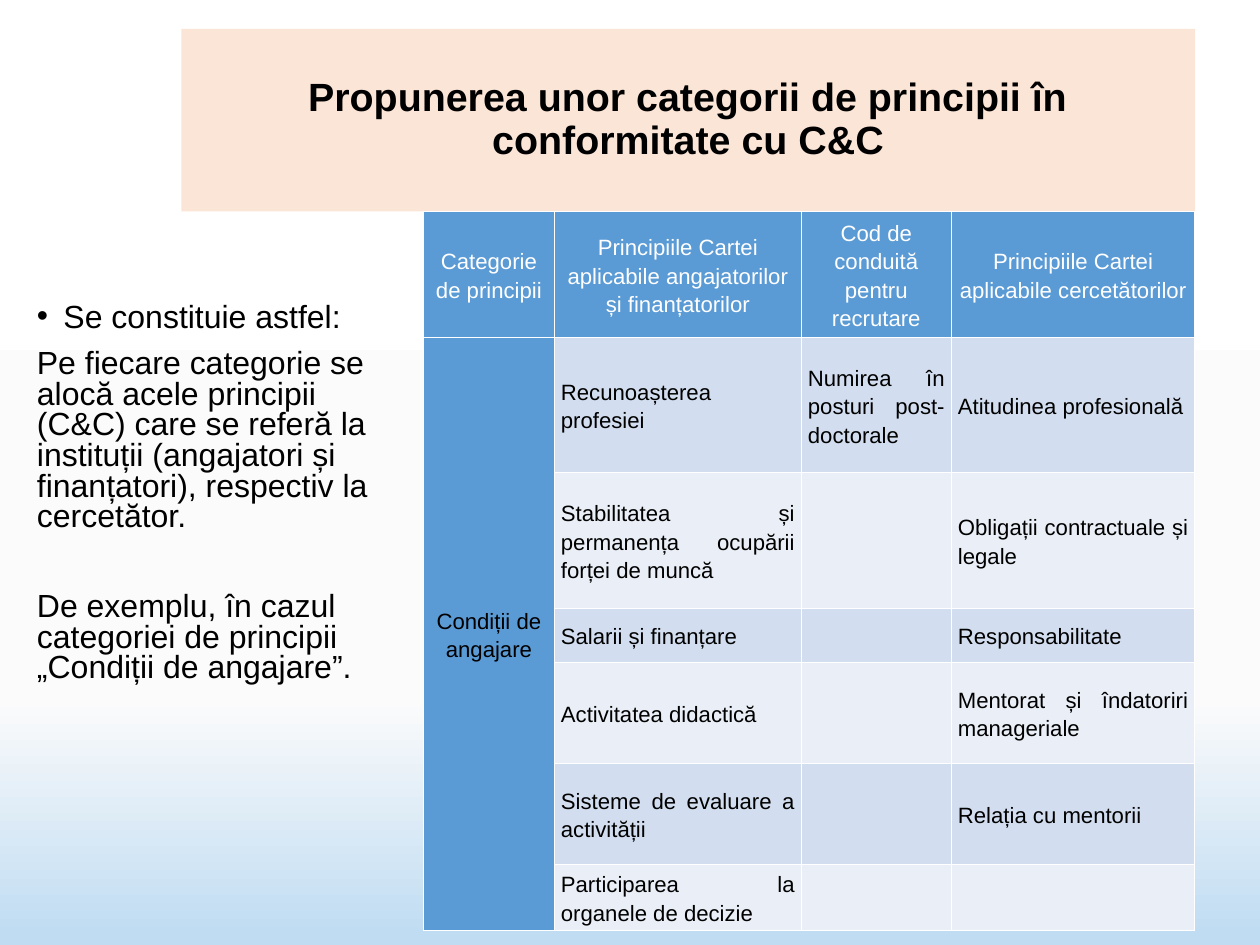
from lxml import etree
from pptx import Presentation
from pptx.dml.color import RGBColor
from pptx.enum.text import MSO_ANCHOR, MSO_AUTO_SIZE, PP_ALIGN
from pptx.oxml.ns import qn
from pptx.util import Cm, Pt

MIDDLE, TOP = MSO_ANCHOR.MIDDLE, MSO_ANCHOR.TOP
LEFT, CENTER, JUSTIFY = PP_ALIGN.LEFT, PP_ALIGN.CENTER, PP_ALIGN.JUSTIFY
NO_AUTOFIT = MSO_AUTO_SIZE.NONE
TITLE_ONLY = 5

BLACK, WHITE, PEACH, BLUE = "000000", "FFFFFF", "FBE5D6", "5B9BD5"
BANDS = ("D2DEEF", "EAEFF7")
BACKGROUND_STOPS = ((0, WHITE), (74, "FBFBFB"), (99, "C0DCF2"))

COLUMN_WIDTHS = (3.75, 7.08, 4.3, 6.98)
ROW_HEIGHTS = (3.61, 3.88, 3.88, 1.55, 2.9, 2.9, 1.9)
HEADERS = (
    "Categorie de principii",
    "Principiile Cartei aplicabile angajatorilor și finanțatorilor",
    "Cod de conduită pentru recrutare",
    "Principiile Cartei aplicabile cercetătorilor",
)
CATEGORY = "Condiții de angajare"
PRINCIPLES = (
    ("Recunoașterea profesiei", "Numirea în posturi post-doctorale", "Atitudinea profesională"),
    ("Stabilitatea și permanența ocupării forței de muncă", "", "Obligații contractuale și legale"),
    ("Salarii și finanțare", "", "Responsabilitate"),
    ("Activitatea didactică", "", "Mentorat și îndatoriri manageriale"),
    ("Sisteme de evaluare a activității", "", "Relația cu mentorii"),
    ("Participarea la organele de decizie", "", ""),
)
EXPLANATION = (
    ("Se constituie astfel:", 12),
    ("Pe fiecare categorie se alocă acele principii (C&C) care se referă la instituții "
     "(angajatori și finanțatori), respectiv la cercetător.", 12),
    ("De exemplu, în cazul categoriei de principii „Condiții de angajare”.", 48),
)


def color(hex_value):
    return RGBColor.from_string(hex_value)


def set_all(target, values):
    for name, value in values.items():
        setattr(target, name, value)


class SlideBuilder:
    font = "Arial"
    frame_format = {
        "margin_left": Cm(0.3), "margin_right": Cm(0.3),
        "margin_top": Cm(0.15), "margin_bottom": Cm(0.15),
        "word_wrap": True, "auto_size": NO_AUTOFIT,
    }
    cell_format = {
        "margin_left": Cm(0.19), "margin_right": Cm(0.19),
        "margin_top": 0, "margin_bottom": 0, "vertical_anchor": MIDDLE,
    }
    cell_paragraph = {"line_spacing": 1.15, "space_before": Pt(10), "space_after": Pt(10)}

    def __init__(self, slide):
        self.slide = slide

    def background(self, stops):
        fill = self.slide.background.fill
        fill.gradient()
        fill.gradient_angle = 270
        stop_list = next(self.slide.element.iter(qn("a:gsLst")))
        for stop in list(stop_list):
            stop_list.remove(stop)
        for position, hex_value in stops:
            stop = etree.SubElement(stop_list, qn("a:gs"), pos=str(position * 1000))
            etree.SubElement(stop, qn("a:srgbClr"), val=hex_value)

    def fill_paragraph(self, paragraph, text, size, hex_value, bold=False, **layout):
        set_all(paragraph, layout)
        paragraph.font.size = Pt(size)
        if text:
            run = paragraph.add_run()
            run.text = text
            set_all(run.font, {"name": self.font, "size": Pt(size), "bold": bold})
            run.font.color.rgb = color(hex_value)

    def place(self, shape, left, top, width, height, anchor):
        set_all(shape, {"left": Cm(left), "top": Cm(top),
                        "width": Cm(width), "height": Cm(height)})
        set_all(shape.text_frame, {**self.frame_format, "vertical_anchor": anchor})

    def title(self, text, *box):
        shape = self.slide.shapes.title
        self.place(shape, *box, MIDDLE)
        shape.fill.solid()
        shape.fill.fore_color.rgb = color(PEACH)
        self.fill_paragraph(shape.text_frame.paragraphs[0], text, 32, BLACK, bold=True,
                            alignment=CENTER, line_spacing=0.9)

    def text(self, paragraphs, *box):
        """Add a text box whose first paragraph carries a bullet."""
        shape = self.slide.shapes.add_textbox(0, 0, 0, 0)
        self.place(shape, *box, TOP)
        frame = shape.text_frame
        for index, (text, space) in enumerate(paragraphs):
            paragraph = frame.add_paragraph() if index else frame.paragraphs[0]
            self.fill_paragraph(paragraph, text, 26, BLACK, alignment=LEFT,
                                line_spacing=0.8, space_before=Pt(space))
        properties = frame.paragraphs[0]._p.get_or_add_pPr()
        properties.set("marL", str(Cm(0.76)))
        properties.set("indent", str(-Cm(0.76)))
        etree.SubElement(properties, qn("a:buFont"), typeface=self.font)
        bullet = etree.SubElement(properties, qn("a:buChar"), char="•")
        default_run = properties.find(qn("a:defRPr"))
        if default_run is not None:
            bullet.addnext(default_run)

    def cell(self, cell, text, fill, text_color=BLACK, alignment=JUSTIFY):
        set_all(cell, self.cell_format)
        properties = cell._tc.get_or_add_tcPr()
        for side in ("lnL", "lnR", "lnT", "lnB"):
            line = etree.SubElement(properties, qn(f"a:{side}"), w=str(Pt(1)))
            solid = etree.SubElement(line, qn("a:solidFill"))
            etree.SubElement(solid, qn("a:srgbClr"), val=WHITE)
        cell.fill.solid()
        cell.fill.fore_color.rgb = color(fill)
        self.fill_paragraph(cell.text_frame.paragraphs[0], text, 18, text_color,
                            alignment=alignment, **self.cell_paragraph)

    def table(self, left, top):
        table = self.slide.shapes.add_table(
            len(ROW_HEIGHTS), len(COLUMN_WIDTHS), Cm(left), Cm(top),
            Cm(sum(COLUMN_WIDTHS)), Cm(sum(ROW_HEIGHTS))).table
        set_all(table, {"first_row": False, "horz_banding": False})
        for column, width in zip(table.columns, COLUMN_WIDTHS):
            column.width = Cm(width)
        for row, height in zip(table.rows, ROW_HEIGHTS):
            row.height = Cm(height)
        for column, header in enumerate(HEADERS):
            self.cell(table.cell(0, column), header, BLUE, WHITE, CENTER)
        for row, principles in enumerate(PRINCIPLES, 1):
            self.cell(table.cell(row, 0), CATEGORY if row == 1 else "", BLUE, alignment=CENTER)
            for column, principle in enumerate(principles, 1):
                self.cell(table.cell(row, column), principle, BANDS[(row - 1) % 2])
        table.cell(1, 0).merge(table.cell(len(PRINCIPLES), 0))


def main():
    presentation = Presentation()
    presentation.slide_width, presentation.slide_height = Cm(36.12), Cm(27.1)
    layout = presentation.slide_layouts[TITLE_ONLY]
    builder = SlideBuilder(presentation.slides.add_slide(layout))
    builder.background(BACKGROUND_STOPS)
    builder.title("Propunerea unor categorii de principii în conformitate cu C&C",
                  5.2, 0.83, 29.06, 5.23)
    builder.text(EXPLANATION, 0.76, 8.58, 11.38, 12.22)
    builder.table(12.14, 6.07)
    presentation.save("out.pptx")


if __name__ == "__main__":
    main()
